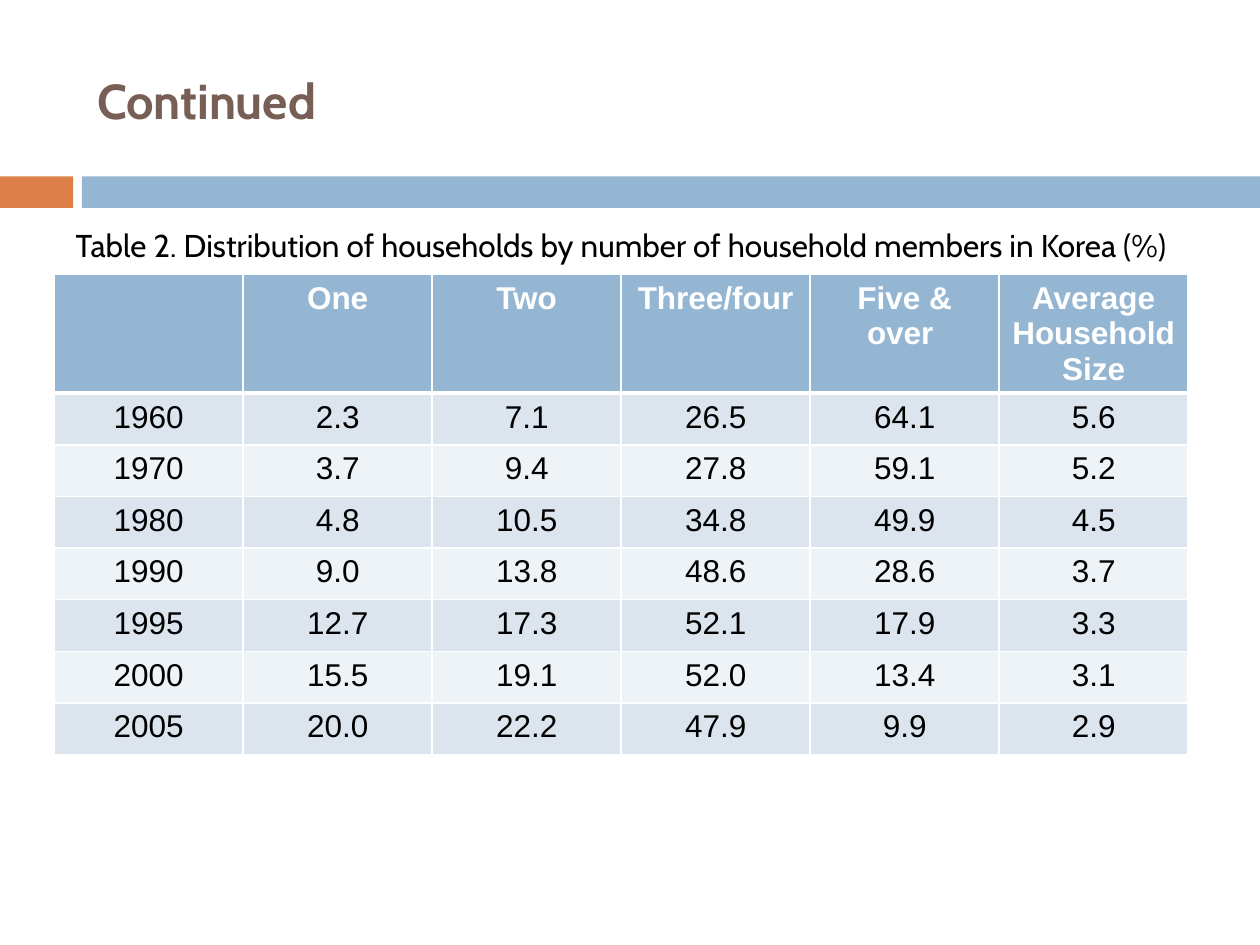
"""Build a slide with a table of Korean households by number of members."""
import pptx
import pptx.dml.color
import pptx.enum.shapes
import pptx.enum.text
import pptx.oxml
import pptx.oxml.ns
import pptx.util

Inches = pptx.util.Inches
Pt = pptx.util.Pt
RGBColor = pptx.dml.color.RGBColor
ALIGN = pptx.enum.text.PP_ALIGN
MIDDLE = pptx.enum.text.MSO_ANCHOR.MIDDLE

WHITE = RGBColor(0xFF, 0xFF, 0xFF)
BLACK = RGBColor(0x00, 0x00, 0x00)
BROWN = RGBColor(0x77, 0x5F, 0x55)
ORANGE = RGBColor(0xDD, 0x80, 0x47)
BLUE = RGBColor(0x94, 0xB6, 0xD2)
BANDS = (RGBColor(0xEE, 0xF3, 0xF7), RGBColor(0xDC, 0xE5, 0xEE))

ROWS = [
    ("", "One", "Two", "Three/four", "Five & over ", "Average Household Size"),
    ("1960", "2.3", "7.1", "26.5", "64.1", "5.6"),
    ("1970", "3.7", "9.4", "27.8", "59.1", "5.2"),
    ("1980", "4.8", "10.5", "34.8", "49.9", "4.5"),
    ("1990", "9.0", "13.8", "48.6", "28.6", "3.7"),
    ("1995", "12.7", "17.3", "52.1", "17.9", "3.3"),
    ("2000", "15.5", "19.1", "52.0", "13.4", "3.1"),
    ("2005", "20.0", "22.2", "47.9", "9.9", "2.9"),
]


def write(frame, text, size, face, color, bold, align):
    para = frame.paragraphs[0]
    para.alignment = align
    run = para.add_run()
    run.text = text
    font = run.font
    font.size, font.name, font.bold = Pt(size), face, bold
    font.color.rgb = color


def edge(cell, side, width):
    line = pptx.oxml.parse_xml(
        f'<a:{side} {pptx.oxml.ns.nsdecls("a")} w="{Pt(width)}">'
        f'<a:solidFill><a:srgbClr val="{WHITE}"/></a:solidFill></a:{side}>')
    cell._tc.get_or_add_tcPr().append(line)


deck = pptx.Presentation()
deck.slide_width, deck.slide_height = Inches(10), Inches(7.5)
slide = deck.slides.add_slide(deck.slide_layouts[5])
shapes = slide.shapes

for left, width, color in ((0, 0.58, ORANGE), (0.65, 9.35, BLUE)):
    bar = shapes.add_shape(pptx.enum.shapes.MSO_SHAPE.RECTANGLE,
                           Inches(left), Inches(1.4), Inches(width), Inches(0.25))
    bar.shadow.inherit = False
    bar.fill.solid()
    bar.fill.fore_color.rgb = color
    bar.line.fill.background()

title = shapes.title
title.left, title.top = Inches(0.67), Inches(0.25)
title.width, title.height = Inches(8.92), Inches(1.08)
title.text_frame.vertical_anchor = MIDDLE
write(title.text_frame, "Continued", 28, "Cabin", BROWN, True, ALIGN.LEFT)

table = shapes.add_table(len(ROWS), len(ROWS[0]), Inches(0.43), Inches(2.18),
                         Inches(9), Inches(3.79)).table
for column in table.columns:
    column.width = Inches(1.5)
for i, row in enumerate(ROWS):
    head = i == 0
    table.rows[i].height = Inches(0.92 if head else 0.41)
    for j, text in enumerate(row):
        cell = table.cell(i, j)
        edge(cell, "lnL", 1)
        edge(cell, "lnR", 1)
        edge(cell, "lnT", 3 if i == 1 else 1)
        edge(cell, "lnB", 3 if head else 1)
        cell.fill.solid()
        cell.fill.fore_color.rgb = BLUE if head else BANDS[i % 2]
        if text:
            write(cell.text_frame, text, 18, "Arial",
                  WHITE if head else BLACK, head, ALIGN.CENTER)

label = shapes.add_textbox(Inches(0.43), Inches(1.7), Inches(9), Inches(0.49))
label.text_frame.word_wrap = True
label.text_frame.vertical_anchor = MIDDLE
write(label.text_frame,
      "Table 2. Distribution of households by number of household members in Korea (%)",
      18, "Cabin", BLACK, False, ALIGN.CENTER)

deck.save("out.pptx")
